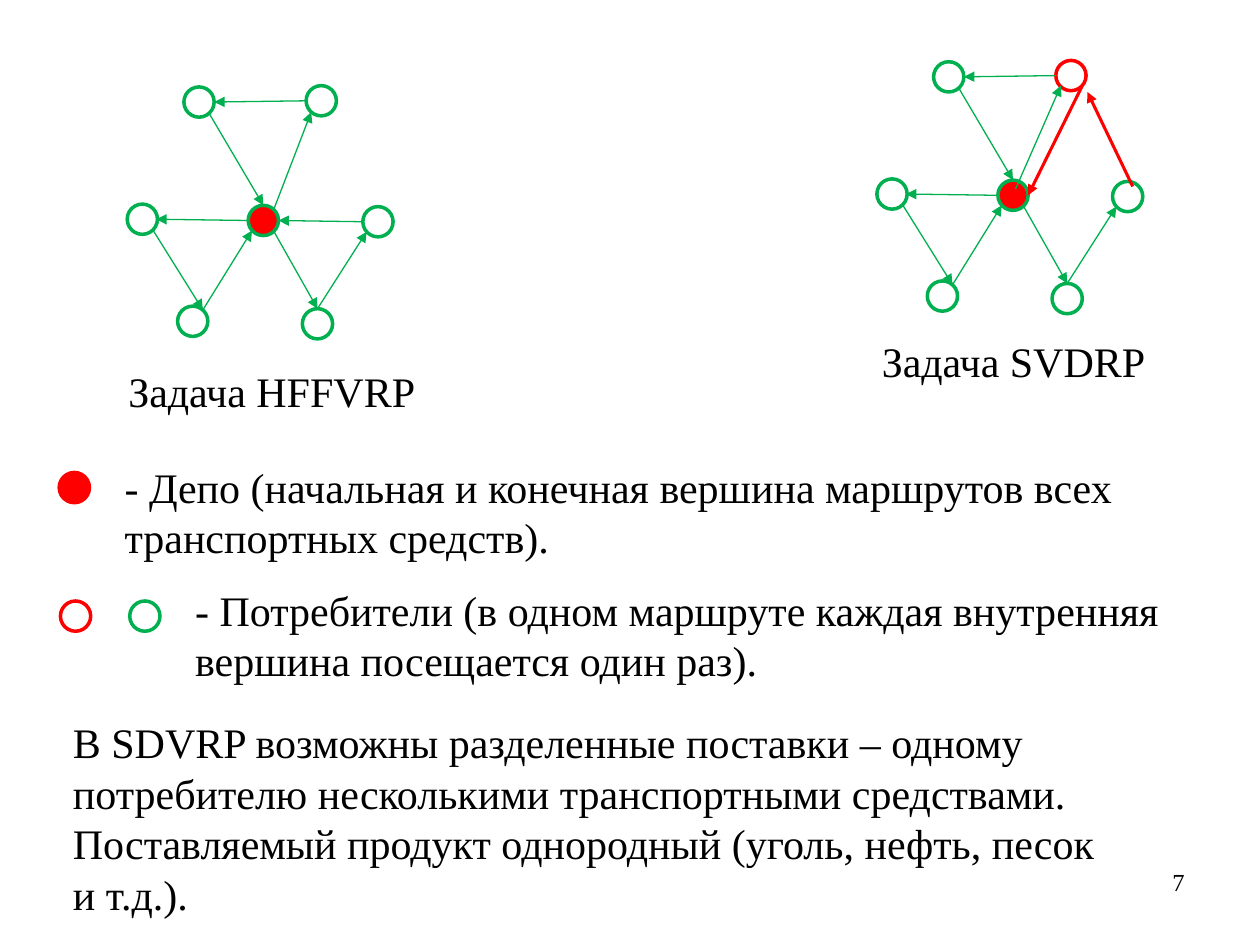
from lxml import etree
from pptx import Presentation
from pptx import util as u
from pptx.dml.color import RGBColor
from pptx.enum import shapes, text
from pptx.oxml import ns

GREEN, RED, WHITE, BLACK = "00B050", "FF0000", "FFFFFF", "000000"
FONT = "Times New Roman"
NODE = 24

deck = Presentation()
deck.slide_width, deck.slide_height = u.Inches(10), u.Inches(7.5)
COL = deck.slide_width // 1000
ROW = deck.slide_height // 750
slide = deck.slides.add_slide(deck.slide_layouts[6])


def add_node(col, row, fill, outline):
    node = slide.shapes.add_shape(
        shapes.MSO_SHAPE.OVAL, col * COL, row * ROW, NODE * COL, NODE * ROW)
    node.shadow.inherit = False
    node.fill.solid()
    node.fill.fore_color.rgb = RGBColor.from_string(fill)
    node.line.color.rgb = RGBColor.from_string(outline)
    node.line.width = u.Pt(2)


def add_route(x1, y1, x2, y2, colour, width):
    route = slide.shapes.add_connector(
        shapes.MSO_CONNECTOR.STRAIGHT, x1 * COL, y1 * ROW, x2 * COL, y2 * ROW)
    route.line.color.rgb = RGBColor.from_string(colour)
    route.line.width = u.Pt(width)
    etree.SubElement(route.line._get_or_add_ln(), ns.qn("a:tailEnd"), type="triangle")
    etree.SubElement(route._element.spPr, ns.qn("a:effectLst"))


green_customers = [(141, 243), (288, 164), (146, 69), (101, 162), (240, 245)]
depot = (197, 163)
shared_customer = (243, 68)
common_routes = [
    (243, 80, 170, 81), (166, 90, 209, 163), (197, 175, 124, 174),
    (121, 182, 161, 246), (161, 246, 200, 183),
    (217, 183, 252, 245), (252, 245, 291, 184),
]
whole_routes = [(217, 167, 247, 89, GREEN, 0.75), (288, 176, 221, 175, GREEN, 0.75)]
split_routes = [(211, 170, 247, 88, GREEN, 0.75), (304, 168, 268, 93, RED, 1.75),
                (264, 88, 221, 175, RED, 1.75)]

graphs = [(0, 0, GREEN, whole_routes), (595, -20, RED, split_routes)]
for dx, dy, shared_colour, own_routes in graphs:
    for col, row in green_customers:
        add_node(col + dx, row + dy, WHITE, GREEN)
    add_node(depot[0] + dx, depot[1] + dy, RED, GREEN)
    add_node(shared_customer[0] + dx, shared_customer[1] + dy, WHITE, shared_colour)
    for ends in common_routes:
        own_routes = own_routes + [(*ends, GREEN, 0.75)]
    for x1, y1, x2, y2, colour, width in own_routes:
        add_route(x1 + dx, y1 + dy, x2 + dx, y2 + dy, colour, width)

legend = [(47, 375, RED, RED), (48, 477, WHITE, RED), (103, 477, WHITE, GREEN)]
for marker in legend:
    add_node(*marker)

LEFT, RIGHT = text.PP_ALIGN.LEFT, text.PP_ALIGN.RIGHT
captions = [
    (690, 261, 244, 51, 24, LEFT, "Задача SVDRP"),
    (92, 285, 250, 51, 24, LEFT, "Задача HFFVRP"),
    (89, 361, 878, 91, 24, LEFT,
     "- Депо (начальная и конечная вершина маршрутов всех транспортных средств)."),
    (145, 459, 821, 91, 24, LEFT,
     "- Потребители (в одном маршруте каждая внутренняя вершина посещается один раз)."),
    (48, 564, 851, 172, 24, LEFT,
     "В SDVRP возможны разделенные поставки – одному потребителю несколькими "
     "транспортными средствами. Поставляемый продукт однородный "
     "(уголь, нефть, песок и т.д.)."),
    (717, 683, 233, 52, 14, RIGHT, "7"),
]
for col, row, cols, rows, size, align, wording in captions:
    caption = slide.shapes.add_textbox(col * COL, row * ROW, cols * COL, rows * ROW)
    caption.text_frame.word_wrap = True
    line = caption.text_frame.paragraphs[0]
    line.alignment = align
    run = line.add_run()
    run.text = wording
    run.font.name = FONT
    run.font.size = u.Pt(size)
    run.font.color.rgb = RGBColor.from_string(BLACK)

deck.save("out.pptx")
